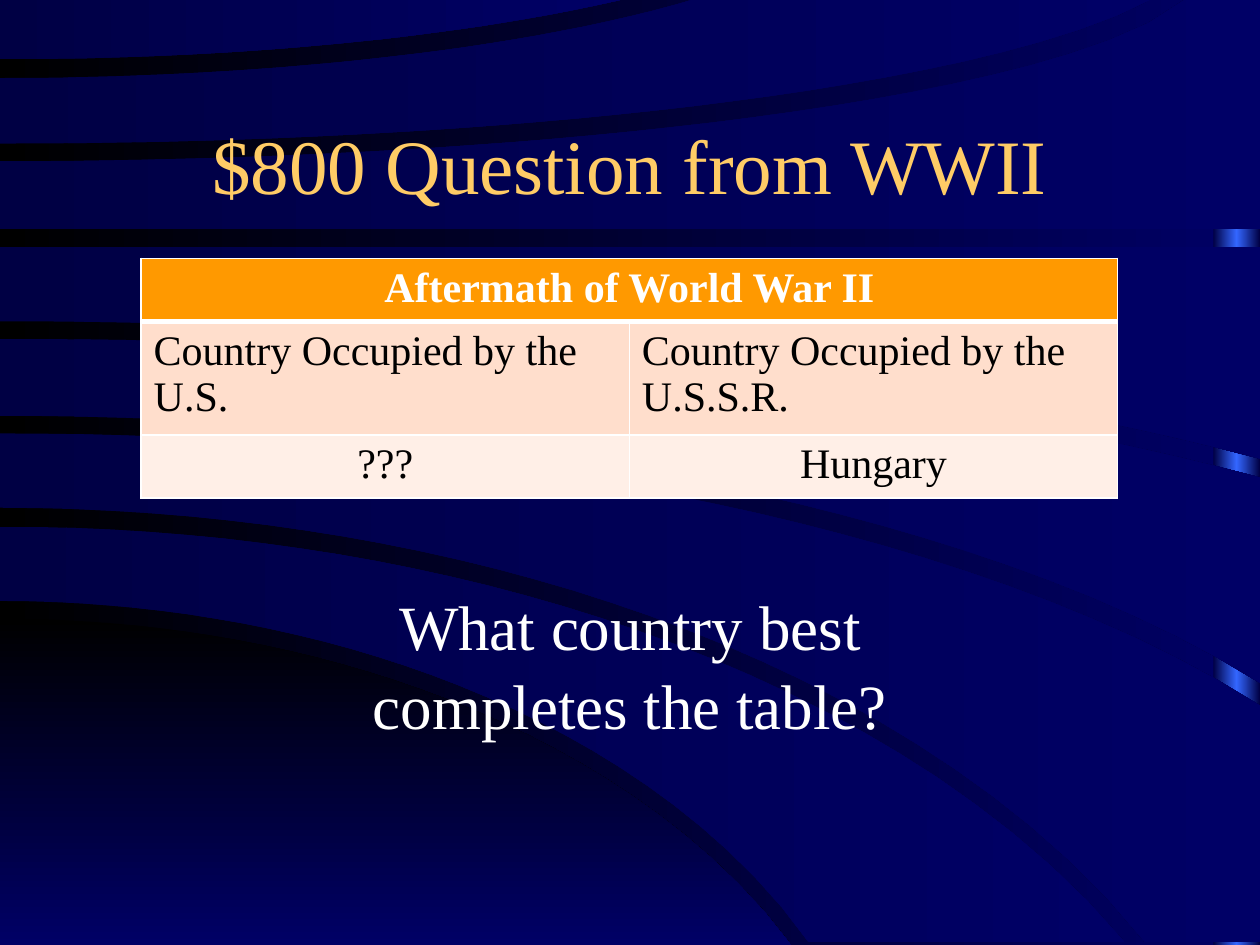
from copy import deepcopy
from math import sqrt

from pptx import Presentation
from pptx.dml.color import RGBColor
from pptx.enum.shapes import MSO_SHAPE as Shape
from pptx.enum.text import MSO_ANCHOR as Anchor, PP_ALIGN as Align
from pptx.oxml import parse_xml
from pptx.oxml.ns import nsdecls, qn
from pptx.util import Inches, Pt

BLACK = RGBColor(0x00, 0x00, 0x00)
WHITE = RGBColor(0xFF, 0xFF, 0xFF)
NAVY = RGBColor(0x00, 0x00, 0x66)
DARK_NAVY = RGBColor(0x00, 0x00, 0x44)
BRIGHT_BLUE = RGBColor(0x33, 0x66, 0xFF)
GOLD = RGBColor(0xFF, 0xCC, 0x66)
ORANGE = RGBColor(0xFF, 0x99, 0x00)
PEACH = RGBColor(0xFF, 0xDE, 0xCC)
PALE_PEACH = RGBColor(0xFF, 0xEF, 0xE7)
FONT = "Times New Roman"

# Upper and lower edge of each swoosh, from back to front. An edge is an
# elliptical arc: height at the left side, end x, end y, half width of ellipse
SWOOSHES = [
    ((4.91, 6.28, 7.5, 7), (7.5, 6.28, 7.5, 7)),
    ((4.18, 8.93, 7.48, 10), (4.77, 6.42, 7.48, 7.1)),
    ((3.44, 10, 5.6, 11.6), (4.03, 9.09, 7.48, 10.1)),
    ((2.69, 10, 3.79, 14), (3.3, 10, 5.42, 11.6)),
    ((1.96, 10, 1.96, 14), (2.55, 10, 3.64, 14)),
    ((1.28, 9.43, -0.02, 9.6), (1.82, 10, 1.82, 14)),
    ((0.62, 5.56, -0.02, 7), (1.14, 9.17, -0.02, 9.6)),
    ((-0.02, 5.01, -0.02, 7), (0.47, 5.01, -0.02, 7))]
ARC_STEPS = 30


def set_gradient(fill, colors, angle=0):
    fill.gradient_angle = angle
    for index, (stop, color) in enumerate(zip(fill.gradient_stops, colors)):
        stop.position = index / (len(colors) - 1)
        stop.color.rgb = color


def write_text(frame, text, size, color, align=Align.CENTER, bold=False):
    frame.word_wrap = True
    paragraph = frame.paragraphs[0]
    paragraph.text = text
    paragraph.alignment = align
    font = paragraph.font
    font.name, font.size, font.bold = FONT, Pt(size), bold
    font.color.rgb = color
    return paragraph


presentation = Presentation()
presentation.slide_width, presentation.slide_height = Inches(10), Inches(7.5)
slide = presentation.slides.add_slide(presentation.slide_layouts[6])
shapes = slide.shapes

# Background
background = slide.background.fill
background.gradient()
set_gradient(background, [BLACK, NAVY])

# Glowing strip on the right edge, with a third gradient stop
strip = shapes.add_shape(Shape.RECTANGLE, Inches(9.63), 0, Inches(0.37), Inches(7.5))
strip.shadow.inherit = False
strip.line.fill.background()
strip.fill.gradient()
stop_list = strip._element.spPr.find(".//" + qn("a:gsLst"))
stop_list.append(deepcopy(stop_list[-1]))
set_gradient(strip.fill, [DARK_NAVY, BRIGHT_BLUE, DARK_NAVY])

# Swooshes: along the upper edge, round the outer corner, back along the lower edge
for number, edges in enumerate(SWOOSHES):
    arcs = []
    for start_y, end_x, end_y, half_width in edges:
        drop = (end_y - start_y) / (1 - sqrt(1 - (end_x / half_width) ** 2))
        arc = []
        for step in range(ARC_STEPS + 1):
            x = end_x * step / ARC_STEPS
            arc.append((x, start_y + drop * (1 - sqrt(1 - (x / half_width) ** 2))))
        arcs.append(arc)
    upper, lower = arcs
    near_end, far_end = sorted([upper[-1], lower[-1]])
    corner = (far_end[0], near_end[1])
    points = [(x * 1000, y * 1000) for x, y in upper + [corner] + lower[::-1]]
    builder = shapes.build_freeform(*points[0], scale=Inches(1) / 1000)
    builder.add_line_segments(points[1:], close=True)
    swoosh = builder.convert_to_shape()
    swoosh.shadow.inherit = False
    swoosh.line.fill.background()
    swoosh.fill.gradient()
    if number == 0:
        set_gradient(swoosh.fill, [BLACK, NAVY], 270)
    else:
        set_gradient(swoosh.fill, [DARK_NAVY, NAVY])

# Title
title = shapes.add_textbox(Inches(0.75), Inches(0.67), Inches(8.5), Inches(1.25))
title.text_frame.vertical_anchor = Anchor.MIDDLE
write_text(title.text_frame, "$800 Question from WWII", 44, GOLD)

# Question
question = shapes.add_textbox(Inches(2.5), Inches(4.58), Inches(5), Inches(1.31))
paragraph = write_text(question.text_frame, "What country best completes the table?", 36, WHITE)
paragraph.line_spacing = 1.05

# Table
ROWS = [
    (0.49, ORANGE, WHITE, Align.CENTER, ["Aftermath of World War II", ""]),
    (0.9, PEACH, BLACK, Align.LEFT,
     ["Country Occupied by the U.S.", "Country Occupied by the U.S.S.R."]),
    (0.5, PALE_PEACH, BLACK, Align.CENTER, ["???", "Hungary"])]
table = shapes.add_table(3, 2, Inches(1.12), Inches(2.05), Inches(7.75), Inches(1.89)).table
table.cell(0, 0).merge(table.cell(0, 1))
for row, (height, fill_color, text_color, align, texts) in enumerate(ROWS):
    table.rows[row].height = Inches(height)
    for column, text in enumerate(texts):
        cell = table.cell(row, column)
        cell.fill.solid()
        cell.fill.fore_color.rgb = fill_color
        if text:
            write_text(cell.text_frame, text, 24, text_color, align, bold=row == 0)
        # White borders, thicker between the header and the body
        for index, side in enumerate(["lnL", "lnR", "lnT", "lnB"]):
            thick = (row, side) in [(0, "lnB"), (1, "lnT")]
            border = parse_xml(
                f'<a:{side} {nsdecls("a")} w="{Pt(3 if thick else 1)}">'
                f'<a:solidFill><a:srgbClr val="{WHITE}"/></a:solidFill></a:{side}>')
            cell._tc.get_or_add_tcPr().insert(index, border)

presentation.save("out.pptx")
